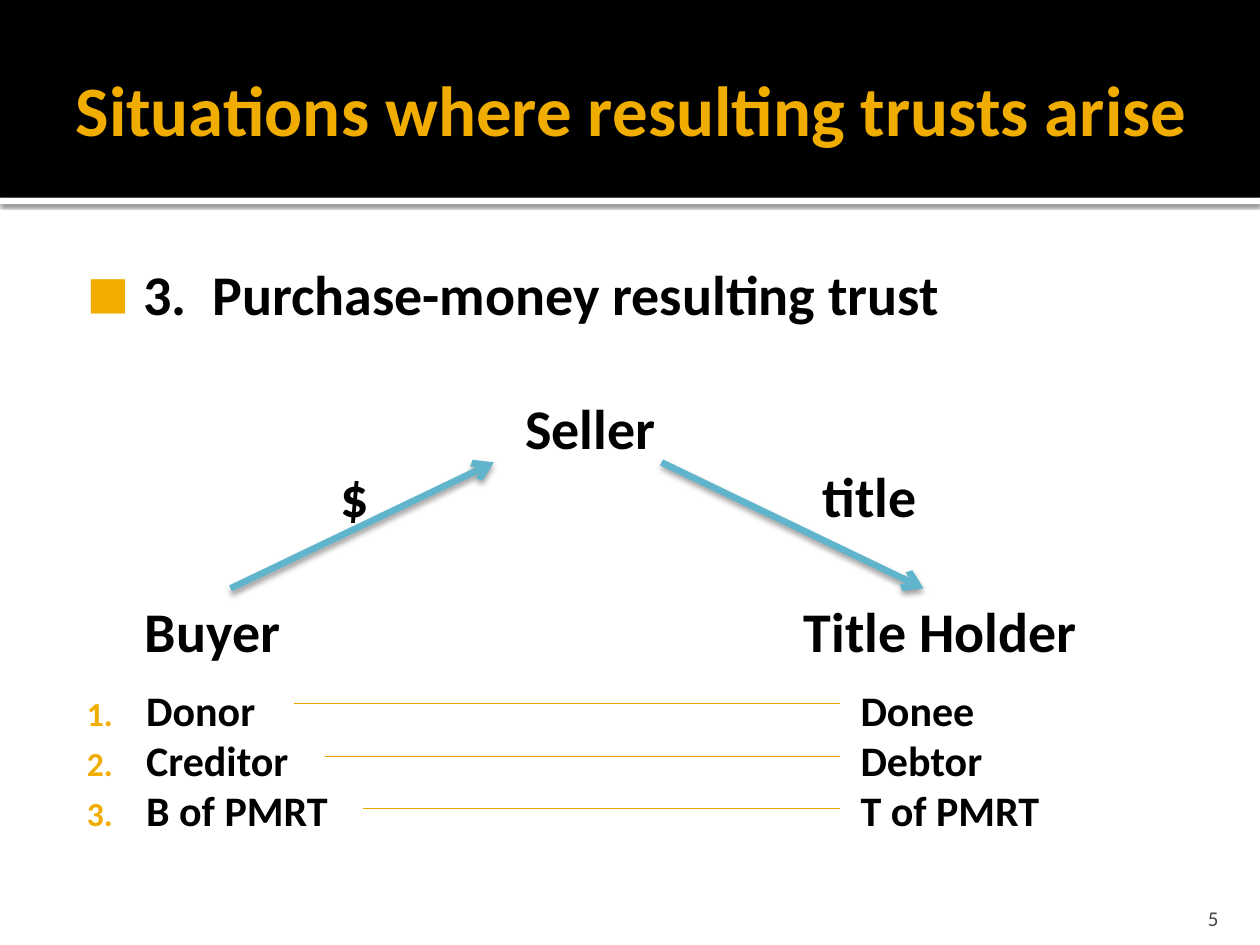
from lxml import etree
from pptx import Presentation
from pptx.dml.color import RGBColor
from pptx.enum.shapes import MSO_CONNECTOR, MSO_SHAPE
from pptx.enum.text import MSO_ANCHOR, PP_ALIGN
from pptx.oxml.ns import qn
from pptx.util import Inches, Pt

STRAIGHT = MSO_CONNECTOR.STRAIGHT
RECTANGLE = MSO_SHAPE.RECTANGLE
MIDDLE = MSO_ANCHOR.MIDDLE
LEFT, RIGHT = PP_ALIGN.LEFT, PP_ALIGN.RIGHT

FONT = "Calibri"
COLORS = {
    "black": "000000",
    "white": "FFFFFF",
    "gold": "F0AD00",
    "rule": "EBA900",
    "arrow": "60B5CC",
    "number": "454545",
}

TITLE = "Situations where resulting trusts arise"
HEADING = "3.  Purchase-money resulting trust"
PAGE = "5"

# text, left, vertical centre
PARTIES = [
    ("Seller", 4.17, 3.39),
    ("$", 2.7, 3.93),
    ("title", 6.53, 3.93),
    ("Buyer", 1.15, 5.0),
    ("Title Holder", 6.38, 5.0),
]
ARROWS = [((1.83, 4.67), (3.92, 3.67)), ((5.25, 3.67), (7.33, 4.67))]

# left role, right role, start of the rule between them
ROLES = [
    ("Donor", "Donee", 2.33),
    ("Creditor", "Debtor", 2.58),
    ("B of PMRT", "T of PMRT", 2.88),
]
ROLES_MIDDLE, ROLE_PITCH = 6.03, 28.8
RULE_TOP, RULE_STEP, RULE_END = 5.58, 0.42, 6.67


def rgb(name):
    return RGBColor.from_string(COLORS[name])


def add_effects(shape, shadow=None):
    """Give the shape an effect list: empty, or a downward shadow of (alpha %, blur pt, distance pt)."""
    properties = shape._element.spPr
    effects = etree.SubElement(properties, qn("a:effectLst"))
    if shadow:
        alpha, blur, distance = shadow
        outer = etree.SubElement(effects, qn("a:outerShdw"), blurRad=str(Pt(blur)),
                                 dist=str(Pt(distance)), dir="5400000", rotWithShape="0")
        color = etree.SubElement(outer, qn("a:srgbClr"), val=COLORS["black"])
        etree.SubElement(color, qn("a:alpha"), val=str(alpha * 1000))


def add_band(slide, top, height, color, shadow=None):
    band = slide.shapes.add_shape(RECTANGLE, 0, Inches(top), Inches(10), Inches(height))
    band.fill.solid()
    band.fill.fore_color.rgb = rgb(color)
    band.line.fill.background()
    add_effects(band, shadow)


def add_text(slide, lines, left, middle, width, height, size,
             color="black", bold=True, align=LEFT):
    box = slide.shapes.add_textbox(Inches(left), Inches(middle - height / 2),
                                   Inches(width), Inches(height))
    frame = box.text_frame
    frame.text = "\n".join(lines)
    frame.word_wrap = True
    frame.vertical_anchor = MIDDLE
    frame.margin_left = frame.margin_right = frame.margin_top = frame.margin_bottom = 0
    for paragraph in frame.paragraphs:
        paragraph.alignment = align
        font = paragraph.runs[0].font
        font.name, font.size, font.bold = FONT, Pt(size), bold
        font.color.rgb = rgb(color)
    return frame.paragraphs


def add_bullet(paragraph, indent, kind, **attributes):
    properties = paragraph._p.get_or_add_pPr()
    properties.set("marL", str(Inches(indent)))
    properties.set("indent", str(-Inches(indent)))
    color = etree.SubElement(properties, qn("a:buClr"))
    etree.SubElement(color, qn("a:srgbClr"), val=COLORS["gold"])
    etree.SubElement(properties, qn("a:buSzPct"), val="80000")
    etree.SubElement(properties, qn("a:buFont"), typeface=FONT)
    etree.SubElement(properties, qn(kind), **attributes)


def add_line(slide, start, end, color, width, shadow=None, arrow=False):
    line = slide.shapes.add_connector(STRAIGHT, *map(Inches, start + end))
    line.line.color.rgb = rgb(color)
    line.line.width = Pt(width)
    if arrow:
        etree.SubElement(line.line._get_or_add_ln(), qn("a:tailEnd"), type="arrow")
    add_effects(line, shadow)


def main():
    deck = Presentation()
    deck.slide_width, deck.slide_height = Inches(10), Inches(7.5)
    slide = deck.slides.add_slide(deck.slide_layouts[6])

    add_band(slide, 1.57, 0.05, "white", shadow=(60, 2.5, 0.8))
    add_band(slide, 0, 1.57, "black")
    add_text(slide, [TITLE], 0.6, 0.86, 9.2, 1.37, 40.5, "gold")

    heading = add_text(slide, [HEADING], 0.69, 2.33, 8.5, 0.54, 32)[0]
    add_bullet(heading, 0.45, "a:buChar", char="■")

    for party, left, middle in PARTIES:
        add_text(slide, [party], left, middle, 2.6, 0.54, 32)
    for start, end in ARROWS:
        add_line(slide, start, end, "arrow", 3.78, shadow=(38, 3.5, 2), arrow=True)

    givers, holders, rule_starts = zip(*ROLES)
    giver_lines = add_text(slide, givers, 0.69, ROLES_MIDDLE, 2.2, 1.2, 24)
    holder_lines = add_text(slide, holders, 6.83, ROLES_MIDDLE, 2.2, 1.2, 24)
    for paragraph in giver_lines + holder_lines:
        paragraph.line_spacing = Pt(ROLE_PITCH)
    for paragraph in giver_lines:
        add_bullet(paragraph, 0.47, "a:buAutoNum", type="arabicPeriod")
    for row, rule_start in enumerate(rule_starts):
        top = RULE_TOP + row * RULE_STEP
        add_line(slide, (rule_start, top), (RULE_END, top), "rule", 0.5)

    add_text(slide, [PAGE], 8.97, 7.29, 0.7, 0.2, 12, "number", bold=False, align=RIGHT)
    deck.save("out.pptx")


if __name__ == "__main__":
    main()
